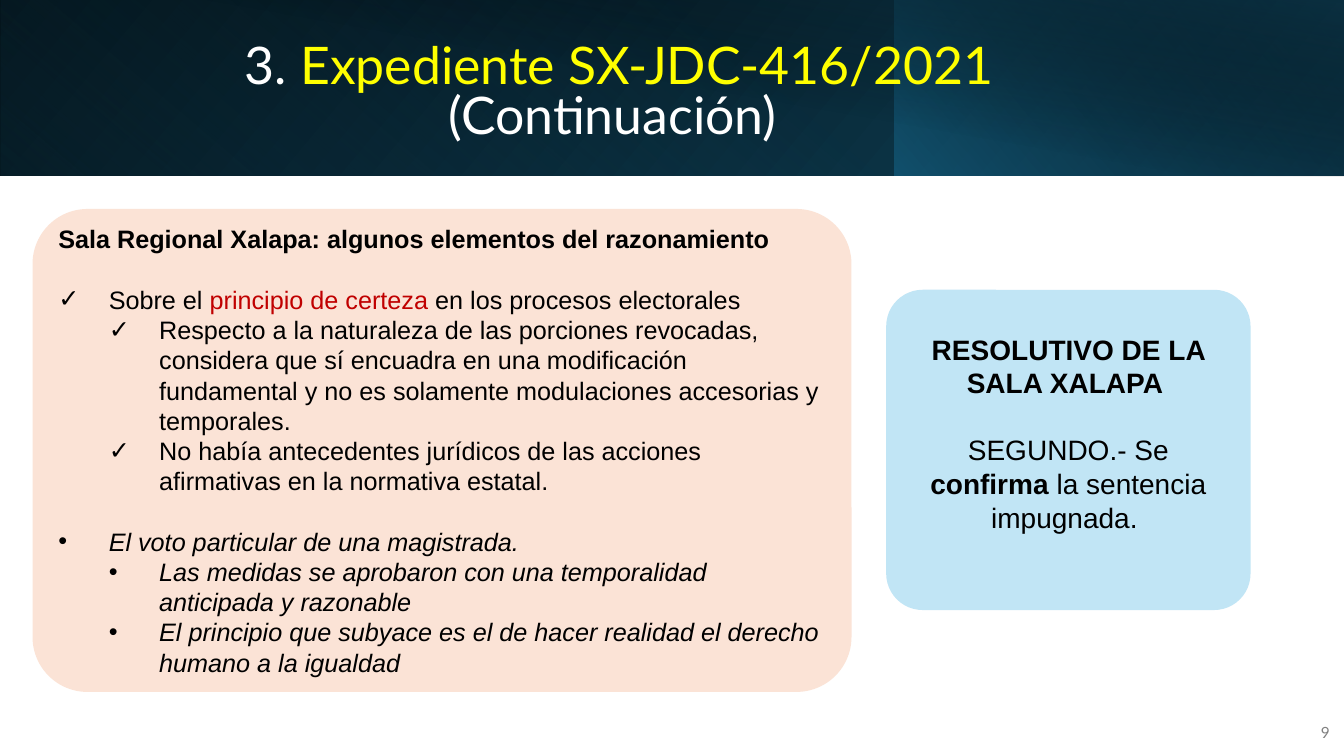
from dataclasses import dataclass

import pptx
import pptx.dml.color
import pptx.enum.shapes
import pptx.enum.text
import pptx.oxml
import pptx.oxml.ns
import pptx.util

PX = 9525
INDENT = 48
CORNER = 0.114
COLORS = {
    "black": "000000", "white": "FFFFFF", "yellow": "FFFF00", "red": "C00000",
    "gray": "808080", "peach": "FBE3D6", "sky": "C1E5F5",
    "navy": "0B3041", "ocean": "104862", "teal": "156082",
}
ALIGN = pptx.enum.text.PP_ALIGN
SHAPE = pptx.enum.shapes.MSO_SHAPE


@dataclass
class Box:
    x: int
    y: int
    w: int
    h: int

    def emu(self) -> tuple[int, int, int, int]:
        return self.x * PX, self.y * PX, self.w * PX, self.h * PX


@dataclass
class Stop:
    pos: int
    color: str
    alpha: int = 100


@dataclass
class Band:
    box: Box
    angle: int
    stops: tuple[Stop, Stop]
    flip: bool = True
    rotation: int = 0


@dataclass
class Run:
    text: str
    color: str = "black"
    bold: bool = False
    italic: bool = False


@dataclass
class Para:
    runs: list[Run]
    bullet: str = ""
    level: int = 0
    before: float = 0


@dataclass
class Style:
    font: str
    size: int
    align: ALIGN
    spacing: float = 1.0


BANDS = [
    Band(Box(0, 0, 1280, 167), 140, (Stop(0, "black"), Stop(100, "ocean"))),
    Band(Box(0, 0, 852, 167), 230, (Stop(20, "teal", 0), Stop(100, "navy", 55)), rotation=180),
    Band(Box(852, 0, 428, 167), 220, (Stop(0, "teal", 66), Stop(100, "black", 30))),
    Band(Box(48, 0, 1232, 168), 280, (Stop(50, "black", 0), Stop(99, "navy", 52)), flip=False),
]
TITLE = [
    Para([Run(" 3.", "white"), Run(" Expediente SX-JDC-416/2021", "yellow")]),
    Para([Run("(Continuación)", "white")]),
]
REASONING = [
    Para([Run("Sala Regional Xalapa: algunos elementos del razonamiento", bold=True)]),
    Para([Run("Sobre el "), Run("principio de certeza ", "red"),
          Run("en los procesos electorales")], "✓", before=21.6),
    Para([Run("Respecto a la naturaleza de las porciones revocadas, considera que sí encuadra "
              "en una modificación fundamental y no es solamente modulaciones accesorias y "
              "temporales.")], "✓", 1),
    Para([Run("No había antecedentes jurídicos de las acciones afirmativas en la "
              "normativa estatal.")], "✓", 1),
    Para([Run("El voto particular de una magistrada.", italic=True)], "•", before=21.6),
    Para([Run("Las medidas se aprobaron con una temporalidad anticipada y razonable",
              italic=True)], "•", 1),
    Para([Run("El principio que subyace es el de hacer realidad el derecho humano a la igualdad",
              italic=True)], "•", 1),
]
RULING = [
    Para([Run("RESOLUTIVO DE LA SALA XALAPA ", bold=True)]),
    Para([Run("SEGUNDO.- Se "), Run("confirma", bold=True),
          Run(" la sentencia impugnada. ")], before=24),
]


def rgb(name: str) -> pptx.dml.color.RGBColor:
    return pptx.dml.color.RGBColor.from_string(COLORS[name])


def add_plain(s, kind: SHAPE, box: Box):
    sp = s.shapes.add_shape(kind, *box.emu())
    sp.shadow.inherit = False
    sp.line.fill.background()
    return sp


def add_band(s, band: Band) -> None:
    sp = add_plain(s, SHAPE.RECTANGLE, band.box)
    sp.rotation = band.rotation
    spPr = sp.element.spPr
    if band.flip:
        spPr.find(pptx.oxml.ns.qn("a:xfrm")).set("flipH", "1")
    stops = "".join(
        f'<a:gs pos="{g.pos * 1000}"><a:srgbClr val="{COLORS[g.color]}">'
        f'<a:alpha val="{g.alpha * 1000}"/></a:srgbClr></a:gs>' for g in band.stops)
    grad = pptx.oxml.parse_xml(
        f'<a:gradFill {pptx.oxml.ns.nsdecls("a")} rotWithShape="1"><a:gsLst>{stops}</a:gsLst>'
        f'<a:lin ang="{band.angle * 60000}" scaled="0"/></a:gradFill>')
    spPr.find(pptx.oxml.ns.qn("a:prstGeom")).addnext(grad)


def add_panel(s, box: Box, color: str):
    sp = add_plain(s, SHAPE.ROUNDED_RECTANGLE, box)
    sp.adjustments[0] = CORNER
    sp.fill.solid()
    sp.fill.fore_color.rgb = rgb(color)
    return sp


def set_bullet(p, bullet: str, level: int) -> None:
    pPr = p._p.get_or_add_pPr()
    ns = pptx.oxml.ns.nsdecls("a")
    pPr.set("marL", str(INDENT * (level + 1) * PX if bullet else 0))
    pPr.set("indent", str(-INDENT * PX if bullet else 0))
    if bullet:
        pPr.append(pptx.oxml.parse_xml(f'<a:buFont {ns} typeface="Arial"/>'))
        pPr.append(pptx.oxml.parse_xml(f'<a:buChar {ns} char="{bullet}"/>'))
    else:
        pPr.append(pptx.oxml.parse_xml(f'<a:buNone {ns}/>'))


def write(tf, paras: list[Para], style: Style) -> None:
    tf.word_wrap = True
    tf.auto_size = pptx.enum.text.MSO_AUTO_SIZE.NONE
    tf.vertical_anchor = pptx.enum.text.MSO_ANCHOR.MIDDLE
    for i, para in enumerate(paras):
        p = tf.add_paragraph() if i else tf.paragraphs[0]
        p.alignment = style.align
        p.level = para.level
        p.line_spacing = style.spacing
        p.space_before = pptx.util.Pt(para.before)
        p.space_after = pptx.util.Pt(0)
        set_bullet(p, para.bullet, para.level)
        for run in para.runs:
            r = p.add_run()
            r.text = run.text
            r.font.name = style.font
            r.font.size = pptx.util.Pt(style.size)
            r.font.bold = run.bold
            r.font.italic = run.italic
            r.font.color.rgb = rgb(run.color)


def place(sp, box: Box) -> None:
    """Move a placeholder to box and in front of everything drawn so far."""
    sp.left, sp.top, sp.width, sp.height = box.emu()
    sp.element.getparent().append(sp.element)


def main() -> None:
    prs = pptx.Presentation()
    prs.slide_width, prs.slide_height = 1280 * PX, 720 * PX
    s = prs.slides.add_slide(prs.slide_layouts[1])
    title, body = s.shapes.title, s.placeholders[1]

    for band in BANDS:
        add_band(s, band)
    place(title, Box(64, 36, 1039, 108))
    write(title.text_frame, TITLE, Style("Lato", 37, ALIGN.CENTER, 0.8))

    add_panel(s, Box(31, 199, 780, 460), "peach")
    place(body, Box(46, 214, 750, 430))
    write(body.text_frame, REASONING, Style("Arial", 18, ALIGN.LEFT))

    ruling = add_panel(s, Box(844, 276, 347, 305), "sky")
    ruling.text_frame.margin_bottom = 37 * PX
    write(ruling.text_frame, RULING, Style("Arial", 20, ALIGN.CENTER))

    number = s.shapes.add_textbox(*Box(1229, 678, 47, 38).emu())
    write(number.text_frame, [Para([Run("9", "gray")])], Style("Lato", 11, ALIGN.RIGHT))
    prs.save("out.pptx")


if __name__ == "__main__":
    main()
